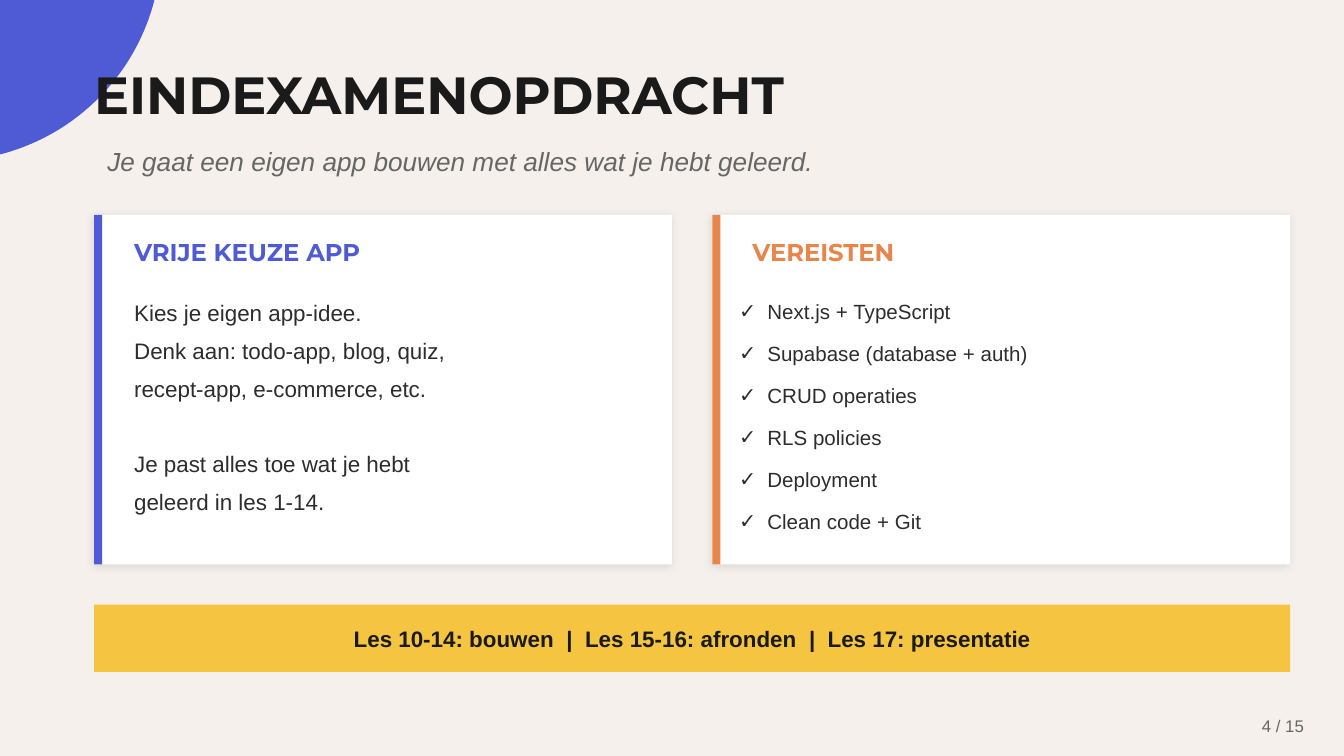
"""Builds the slide that introduces the final exam assignment."""
from lxml import etree
from pptx import Presentation
from pptx.dml.color import RGBColor
from pptx.enum.shapes import MSO_SHAPE
from pptx.enum.text import MSO_ANCHOR, PP_ALIGN
from pptx.oxml import parse_xml
from pptx.oxml.ns import nsdecls, qn
from pptx.util import Inches, Pt

RECT, OVAL = MSO_SHAPE.RECTANGLE, MSO_SHAPE.OVAL
TOP, MIDDLE = MSO_ANCHOR.TOP, MSO_ANCHOR.MIDDLE
LEFT, CENTER, RIGHT = PP_ALIGN.LEFT, PP_ALIGN.CENTER, PP_ALIGN.RIGHT

TITLE = "EINDEXAMENOPDRACHT"
INTRO = "Je gaat een eigen app bouwen met alles wat je hebt geleerd."
CARDS = [
    {
        "head": "VRIJE KEUZE APP",
        "color": "blue",
        "lines": [
            "Kies je eigen app-idee.",
            "Denk aan: todo-app, blog, quiz,",
            "recept-app, e-commerce, etc.",
            "Je past alles toe wat je hebt",
            "geleerd in les 1-14.",
        ],
        "style": {"size": "body", "lead": 1.4, "gaps": {3: 20.2}},
    },
    {
        "head": "VEREISTEN",
        "color": "orange",
        "lines": [
            "Next.js + TypeScript",
            "Supabase (database + auth)",
            "CRUD operaties",
            "RLS policies",
            "Deployment",
            "Clean code + Git",
        ],
        "style": {"size": "list", "lead": 1.7, "inset": 0, "bullet": "✓"},
    },
]
PHASES = ["Les 10-14: bouwen", "Les 15-16: afronden", "Les 17: presentatie"]
PAGE = "4 / 15"

THEME = {
    "color": {
        "back": "F5F0EB", "blue": "4F5BD5", "orange": "E8854A", "yellow": "F5C542",
        "white": "FFFFFF", "dark": "1A1A1A", "text": "2D2D2D", "gray": "666666",
    },
    "size": {"title": 28, "intro": 14, "head": 13, "body": 12, "list": 11, "page": 9},
    "font": {"head": "Montserrat", "body": "Arial"},
}

EDGE, WIDE, HIGH, GAP = 0.7, 4.3, 2.6, 0.3
CARD_TOP, STRIPE, INDENT = 1.6, 0.06, 0.21
FULL = 2 * WIDE + GAP
BAR_BOX = (EDGE, 4.5, FULL, 0.5)

SHADOW = (
    f'<a:effectLst {nsdecls("a")}><a:outerShdw blurRad="50800" dist="12700" '
    'dir="8100000" algn="bl" rotWithShape="0"><a:srgbClr val="000000">'
    '<a:alpha val="10000"/></a:srgbClr></a:outerShdw></a:effectLst>'
)


def color(name):
    """Return a theme colour."""
    return RGBColor.from_string(THEME["color"][name])


def add_form(slide, kind, box, fill, shadow=False):
    """Add a filled shape without an outline."""
    form = slide.shapes.add_shape(kind, *map(Inches, box))
    form.fill.solid()
    form.fill.fore_color.rgb = color(fill)
    form.line.fill.background()
    form.shadow.inherit = False
    if shadow:
        props = form._element.spPr
        props.replace(props.find(qn("a:effectLst")), parse_xml(SHADOW))


def add_bullet(para, mark):
    """Give a paragraph a hanging bullet."""
    props = para._p.get_or_add_pPr()
    props.set("marL", str(Inches(INDENT)))
    props.set("indent", str(-Inches(INDENT)))
    etree.SubElement(props, qn("a:buFont")).set("typeface", THEME["font"]["body"])
    etree.SubElement(props, qn("a:buChar")).set("char", mark)


def add_text(slide, box, lines, size="body", tint="text", font="body", bold=False,
             italic=False, align=LEFT, anchor=TOP, inset=None, lead=None,
             bullet=None, gaps=None):
    """Add a text box with one paragraph per line and return its frame."""
    frame = slide.shapes.add_textbox(*map(Inches, box)).text_frame
    frame.word_wrap = True
    frame.vertical_anchor = anchor
    if inset is not None:
        frame.margin_left = frame.margin_right = Inches(inset)
        frame.margin_top = frame.margin_bottom = Inches(inset)
    for i, line in enumerate(lines):
        para = frame.paragraphs[0] if i == 0 else frame.add_paragraph()
        if bullet:
            add_bullet(para, bullet)
        para.alignment = align
        if lead:
            para.line_spacing = lead
        if gaps and i in gaps:
            para.space_before = Pt(gaps[i])
        for part in [line] if isinstance(line, str) else line:
            run = para.add_run()
            run.text = part
            run.font.name = THEME["font"][font]
            run.font.size = Pt(THEME["size"][size])
            run.font.color.rgb = color(tint)
            run.font.bold, run.font.italic = bold, italic
    return frame


def add_card(slide, left, card):
    """Add a white card with a coloured stripe, a heading and its lines."""
    add_form(slide, RECT, (left, CARD_TOP, WIDE, HIGH), "white", shadow=True)
    add_form(slide, RECT, (left, CARD_TOP, STRIPE, HIGH), card["color"])
    inner = left + 0.2
    add_text(slide, (inner, CARD_TOP + 0.1, 3, 0.35), [card["head"]], size="head",
             tint=card["color"], font="head", bold=True, anchor=MIDDLE)
    add_text(slide, (inner, CARD_TOP + 0.5, WIDE - 0.4, 2), card["lines"],
             **card["style"])


def add_bar(slide):
    """Add the yellow bar with the phases and widely spaced dividers."""
    add_form(slide, RECT, BAR_BOX, "yellow")
    parts = [part for phase in PHASES for part in (" ", "|", " ", phase)][3:]
    frame = add_text(slide, BAR_BOX, [parts], tint="dark", bold=True,
                     align=CENTER, anchor=MIDDLE)
    for run in frame.paragraphs[0].runs:
        if run.text == " ":
            run._r.get_or_add_rPr().set("spc", "330")


def main():
    """Build and save the slide."""
    deck = Presentation()
    deck.slide_width = Inches(10)
    deck.slide_height = deck.slide_width * 9 // 16
    slide = deck.slides.add_slide(deck.slide_layouts[6])
    slide.background.fill.solid()
    slide.background.fill.fore_color.rgb = color("back")

    add_form(slide, OVAL, (-2, -2, 3.2, 3.2), "blue")
    add_text(slide, (EDGE, 0.4, 8.5, 0.6), [TITLE], size="title", tint="dark",
             font="head", bold=True, anchor=MIDDLE, inset=0)
    add_text(slide, (9, 5.25, 0.8, 0.3), [PAGE], size="page", tint="gray",
             align=RIGHT, anchor=MIDDLE)
    add_text(slide, (EDGE, 1, 8.5, 0.4), [INTRO], size="intro", tint="gray",
             italic=True, anchor=MIDDLE)
    for i, card in enumerate(CARDS):
        add_card(slide, EDGE + i * (WIDE + GAP), card)
    add_bar(slide)
    deck.save("out.pptx")


if __name__ == "__main__":
    main()
